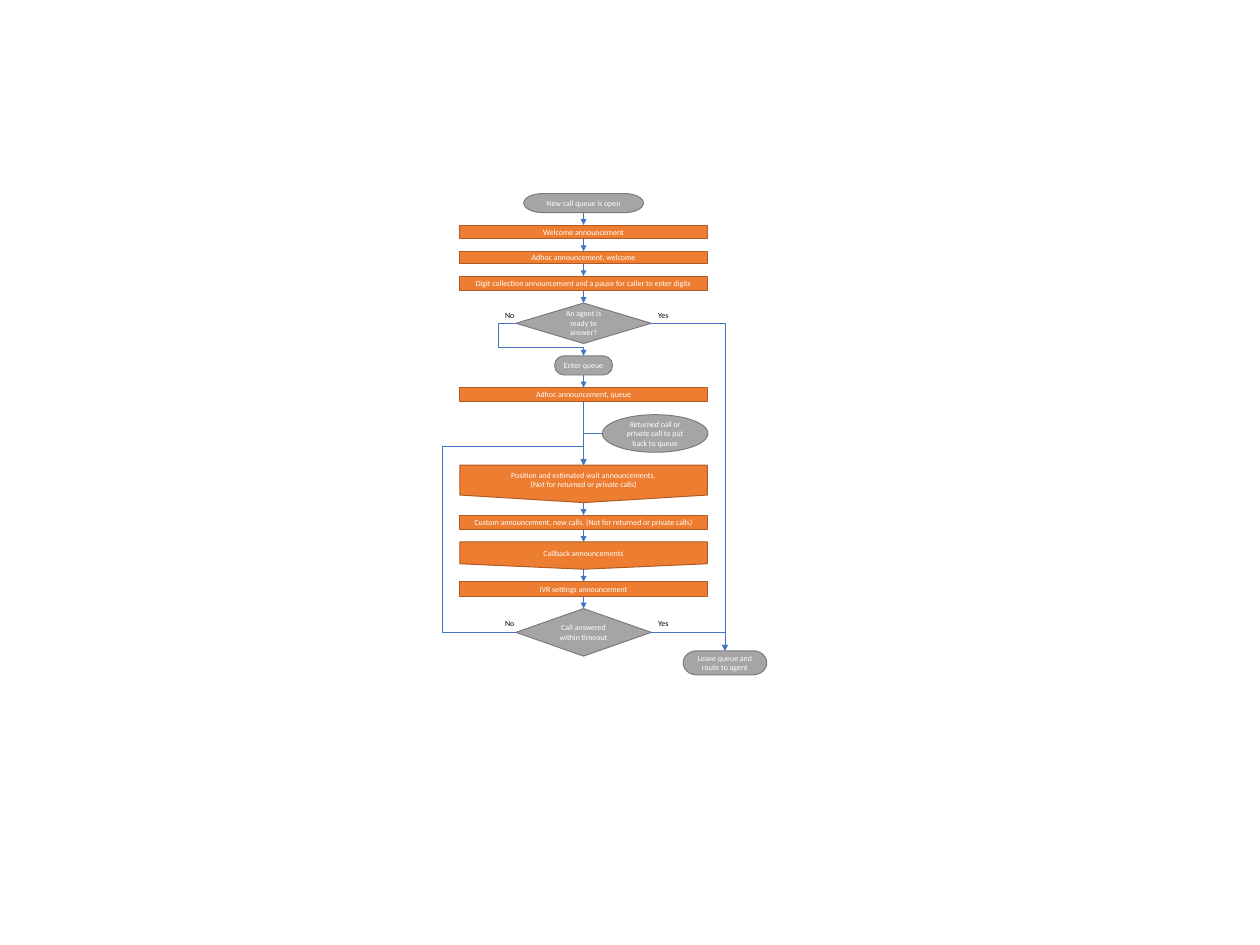
from itertools import cycle
from lxml.etree import SubElement
from pptx import Presentation
from pptx.dml.color import RGBColor
from pptx.enum.shapes import MSO_CONNECTOR, MSO_SHAPE
from pptx.enum.text import MSO_ANCHOR, MSO_AUTO_SIZE, PP_ALIGN
from pptx.oxml.ns import qn
from pptx.util import Inches, Pt

GRAY = RGBColor(0xA5, 0xA5, 0xA5)
SLATE = RGBColor(0x7A, 0x7A, 0x7A)
ORANGE = RGBColor(0xED, 0x7D, 0x31)
RUST = RGBColor(0xAF, 0x5C, 0x24)
BLUE = RGBColor(0x44, 0x72, 0xC4)
WHITE = RGBColor(0xFF, 0xFF, 0xFF)
BLACK = RGBColor(0, 0, 0)

TERM = MSO_SHAPE.FLOWCHART_TERMINATOR
STEP = MSO_SHAPE.FLOWCHART_PROCESS
TEST = MSO_SHAPE.FLOWCHART_DECISION
PAGE = MSO_SHAPE.FLOWCHART_OFFPAGE_CONNECTOR
RING = MSO_SHAPE.FLOWCHART_CONNECTOR

TOP, LEFT, BOTTOM, RIGHT = range(4)
AXIS = 82.35
GAP = 1.75
QUEUE_GAP = 8.9

FLOW = [
    ("open", TERM, 16.9, 2.7, "New call queue is open"),
    ("welcome", STEP, 34.9, 1.95, "Welcome announcement"),
    ("adhoc", STEP, 34.9, 1.75, "Adhoc announcement, welcome"),
    ("digit", STEP, 34.9, 2.05,
     "Digit collection announcement and a pause for caller to enter digits"),
    ("ready", TEST, 19.1, 5.7, "An agent is ready to answer?"),
    ("enter", TERM, 8.2, 2.7, "Enter queue"),
    ("queue", STEP, 34.9, 2.05, "Adhoc announcement, queue"),
    ("wait", PAGE, 34.9, 5.3,
     "Position and estimated wait announcements.\n"
     "(Not for *returned* or* private* calls)"),
    ("custom", STEP, 34.9, 2.05,
     "Custom announcement, new calls. (Not for returned or private calls)"),
    ("callback", PAGE, 34.9, 3.85, "Callback announcements"),
    ("ivr", STEP, 34.9, 2.05, "IVR settings announcement"),
    ("answer", TEST, 19.1, 6.7, "Call answered within timeout"),
]


class Chart:
    def __init__(self, slide, font="Calibri", size=8, cell=0.1):
        self.slide = slide
        self.font = font
        self.size = Pt(size)
        self.cell = cell

    def grid(self, *spans):
        return [Inches(span * self.cell) for span in spans]

    def letter(self, frame, text, color, align):
        frame.word_wrap = True
        for row, line in enumerate(text.split("\n")):
            para = frame.add_paragraph() if row else frame.paragraphs[0]
            para.alignment = align
            for part, slant in zip(line.split("*"), cycle([False, True])):
                if part:
                    run = para.add_run()
                    run.text = part
                    run.font.name = self.font
                    run.font.size = self.size
                    run.font.italic = slant
                    run.font.color.rgb = color

    def node(self, kind, col, row, wide, high, text):
        shape = self.slide.shapes.add_shape(kind, *self.grid(col, row, wide, high))
        shape.shadow.inherit = False
        warm = kind in (STEP, PAGE)
        shape.fill.solid()
        shape.fill.fore_color.rgb = ORANGE if warm else GRAY
        shape.line.color.rgb = RUST if warm else SLATE
        shape.line.width = Pt(1)
        frame = shape.text_frame
        frame.vertical_anchor = MSO_ANCHOR.MIDDLE
        if kind == TERM:
            frame.margin_left = frame.margin_right = Inches(0.06)
            frame.margin_top = frame.margin_bottom = Inches(0.03)
        self.letter(frame, text, WHITE, PP_ALIGN.CENTER)
        return shape

    def label(self, col, row, text):
        frame = self.slide.shapes.add_textbox(*self.grid(col, row, 7.3, 2.4)).text_frame
        self.letter(frame, text, BLACK, PP_ALIGN.LEFT)
        frame.auto_size = MSO_AUTO_SIZE.SHAPE_TO_FIT_TEXT

    def arrow(self, start, end, site=BOTTOM, bends=()):
        kind = MSO_CONNECTOR.STRAIGHT if site == BOTTOM else MSO_CONNECTOR.ELBOW
        link = self.slide.shapes.add_connector(kind, 0, 0, 0, 0)
        link.begin_connect(start, site)
        link.end_connect(end, TOP)
        link.line.color.rgb = BLUE
        link.line.width = Pt(0.5)
        props = link._element.spPr
        SubElement(props.find(qn("a:ln")), qn("a:tailEnd"), type="triangle")
        SubElement(props, qn("a:effectLst"))
        if site != BOTTOM:
            geom = props.find(qn("a:prstGeom"))
            geom.set("prst", f"bentConnector{2 + len(bends)}")
            guides = geom.find(qn("a:avLst"))
            for rank, bend in enumerate(bends, 1):
                SubElement(guides, qn("a:gd"), name=f"adj{rank}",
                           fmla=f"val {round(bend * 100000)}")
        return link


def main():
    deck = Presentation()
    deck.slide_width, deck.slide_height = Inches(17.78), Inches(13.33)
    chart = Chart(deck.slides.add_slide(deck.slide_layouts[6]))

    nodes = {}
    row = 27.3
    for name, kind, wide, high, text in FLOW:
        nodes[name] = chart.node(kind, AXIS - wide / 2, row, wide, high, text)
        row += high + (QUEUE_GAP if name == "queue" else GAP)
    leave = chart.node(TERM, 96.4, 91.8, 11.8, 3.4, "Leave queue and route to agent")
    back = chart.node(RING, 85, 58.5, 14.9, 5.3,
                      "*Returned call* or *private call* to put back to queue")

    names = list(nodes)
    for name, after in zip(names, names[1:]):
        if name != "ready":
            chart.arrow(nodes[name], nodes[after])
    for name in ("ready", "answer"):
        chart.arrow(nodes[name], leave, RIGHT)
    chart.arrow(nodes["ready"], nodes["enter"], LEFT, (-0.26, 0.75))
    chart.arrow(nodes["answer"], nodes["wait"], LEFT, (-1.09, 1.11))
    link = chart.arrow(back, nodes["wait"], LEFT)
    link._element.find(".//" + qn("a:stCxn")).set("idx", "2")

    for row in (43.3, 86.8):
        chart.label(70.3, row, "No")
        chart.label(91.9, row, "Yes")
    deck.save("out.pptx")


if __name__ == "__main__":
    main()
